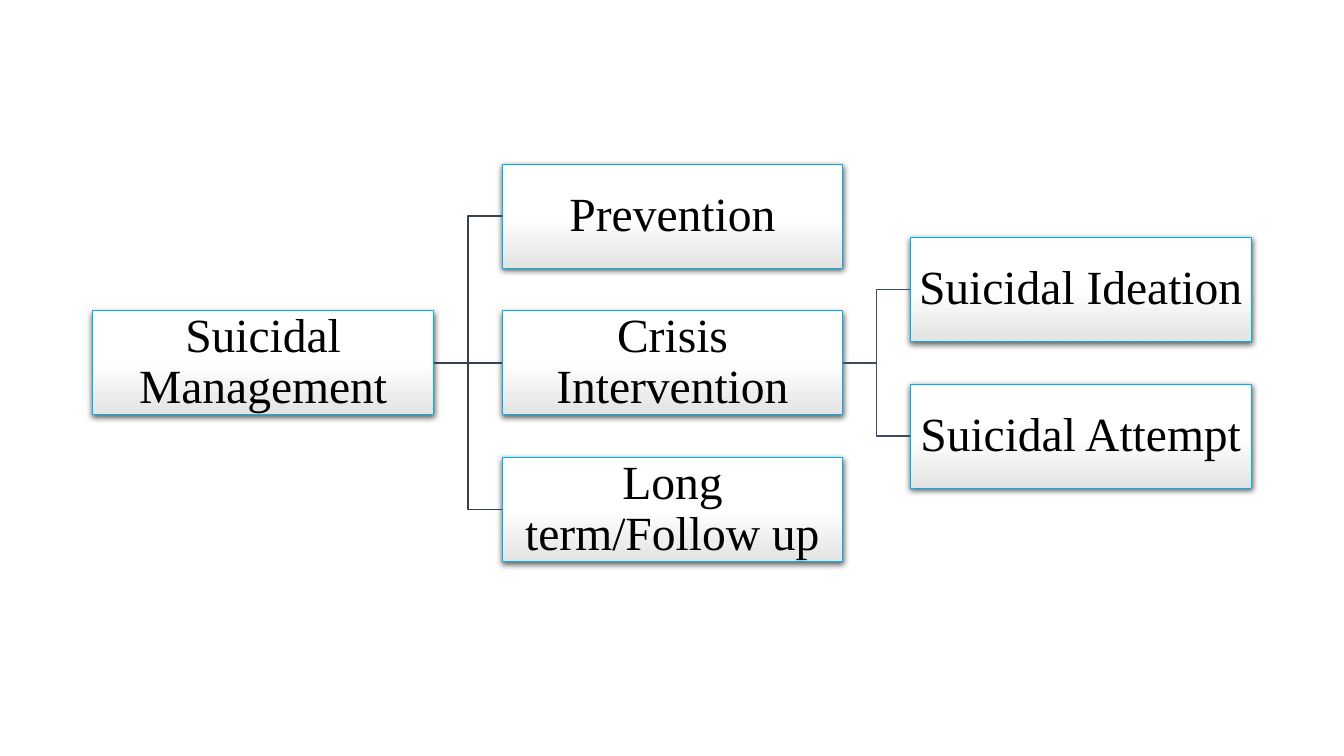
import pptx
import pptx.dml.color
import pptx.enum.shapes
import pptx.enum.text
import pptx.oxml
import pptx.oxml.ns
import pptx.util

Inches = pptx.util.Inches
Pt = pptx.util.Pt

COLORS = {
    "border": "00B0F0",
    "top": "FFFFFF",
    "bottom": "E3E3E3",
    "text": "000000",
    "trunk": "364355",
    "branch": "3E4C60",
}
SHADOW = (
    f'<a:outerShdw {pptx.oxml.ns.nsdecls("a")} blurRad="{Pt(4.5)}" dist="{Pt(1.5)}" '
    'dir="5400000" algn="ctr" rotWithShape="0">'
    '<a:srgbClr val="000000"><a:alpha val="63000"/></a:srgbClr></a:outerShdw>'
)


def color(name):
    return pptx.dml.color.RGBColor.from_string(COLORS[name])


class TreeSlide:
    font, size = "Times New Roman", Pt(34)
    box_width, box_height = 3.38, 1.03
    column_lefts = (0.92, 4.98, 9.03)
    middle, pitch = 3.6, 1.455

    def __init__(self, slide):
        self.slide = slide

    def box(self, text, column, row):
        """Draw a box; row counts from the middle of the tree."""
        top = self.middle + row * self.pitch - self.box_height / 2
        box = self.slide.shapes.add_shape(
            pptx.enum.shapes.MSO_SHAPE.RECTANGLE,
            Inches(self.column_lefts[column]), Inches(top),
            Inches(self.box_width), Inches(self.box_height))

        # White upper half, fading to grey
        box.fill.gradient()
        box.fill.gradient_angle = 270
        for stop, position, name in zip(box.fill.gradient_stops, (0.5, 1), ("top", "bottom")):
            stop.position = position
            stop.color.rgb = color(name)
        box.line.color.rgb = color("border")
        box.line.width = Pt(0.75)
        box.shadow.inherit = False
        effects = box._element.spPr.find(pptx.oxml.ns.qn("a:effectLst"))
        effects.append(pptx.oxml.parse_xml(SHADOW))

        # Label
        frame = box.text_frame
        frame.word_wrap = True
        frame.vertical_anchor = pptx.enum.text.MSO_ANCHOR.MIDDLE
        frame.margin_left = frame.margin_right = Inches(0.02)
        frame.margin_top = frame.margin_bottom = Inches(0.02)
        paragraph = frame.paragraphs[0]
        paragraph.alignment = pptx.enum.text.PP_ALIGN.CENTER
        paragraph.line_spacing = 0.9
        run = paragraph.add_run()
        run.text = text
        run.font.name = self.font
        run.font.size = self.size
        run.font.color.rgb = color("text")
        return box

    def link(self, parent, child, name):
        """Join the right side of parent to the left side of child."""
        kinds = pptx.enum.shapes.MSO_CONNECTOR
        kind = kinds.STRAIGHT if parent.top == child.top else kinds.ELBOW
        link = self.slide.shapes.add_connector(kind, 0, 0, 0, 0)
        link.begin_connect(parent, 3)
        link.end_connect(child, 1)
        link.line.color.rgb = color(name)
        link.line.width = Pt(1)
        link._element.spPr.append(
            pptx.oxml.parse_xml(f'<a:effectLst {pptx.oxml.ns.nsdecls("a")}/>'))


def main():
    presentation = pptx.Presentation()
    presentation.slide_width = Inches(13.33)
    presentation.slide_height = Inches(7.5)
    tree = TreeSlide(presentation.slides.add_slide(presentation.slide_layouts[6]))

    # Boxes, column by column
    management = tree.box("Suicidal Management", 0, 0)
    prevention = tree.box("Prevention", 1, -1)
    crisis = tree.box("Crisis Intervention", 1, 0)
    follow_up = tree.box("Long term/Follow up", 1, 1)
    ideation = tree.box("Suicidal Ideation", 2, -0.5)
    attempt = tree.box("Suicidal Attempt", 2, 0.5)

    # Links
    for approach in (prevention, crisis, follow_up):
        tree.link(management, approach, "trunk")
    for situation in (ideation, attempt):
        tree.link(crisis, situation, "branch")

    presentation.save("out.pptx")


if __name__ == "__main__":
    main()
